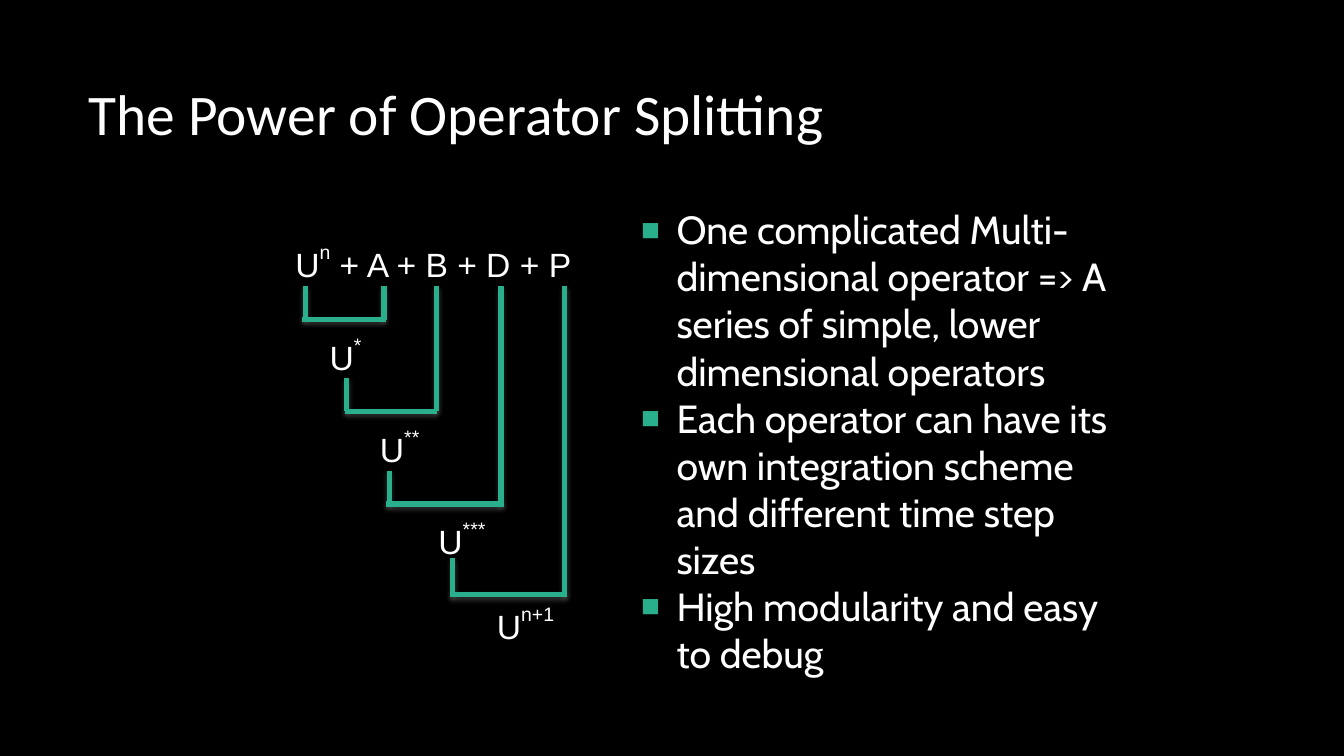
from lxml import etree
from pptx import Presentation
from pptx.dml.color import RGBColor
from pptx.enum import shapes, text
from pptx.oxml import parse_xml
from pptx.oxml.ns import nsdecls
from pptx.util import Inches, Pt

WHITE, GREEN, BLACK = "FFFFFF", "29AF8C", "000000"
FORMULA_TOP = 2.84

# left, top, base, superscript, remainder
STATES = [
    (2.83, 2.33, "U", "n", " + A + B + D + P"),
    (3.17, 3.25, "U", "*", ""),
    (3.67, 4.17, "U", "**", ""),
    (4.25, 5.08, "U", "***", ""),
    (4.83, 5.92, "U", "n+1", ""),
]
# x of the state, x of the operator, top at the state, bottom, bar left, bar right
BRACKETS = [
    (3.03, 3.81, 2.84, 3.17, 3.0, 3.83),
    (3.44, 4.33, 3.75, 4.08, 3.42, 4.33),
    (3.86, 4.97, 4.67, 5.0, 3.83, 5.0),
    (4.49, 5.6, 5.54, 5.9, 4.46, 5.62),
]
BENEFITS = [
    "One complicated Multi-dimensional operator => A series of simple, lower dimensional operators",
    "Each operator can have its own integration scheme and different time step sizes",
    "High modularity and easy to debug",
]


def color(value):
    return RGBColor.from_string(value)


def style_run(run, size, font):
    run.font.size = Pt(size)
    run.font.name = font
    run.font.color.rgb = color(WHITE)


def place(shape, left, top, width, height):
    shape.left, shape.top = Inches(left), Inches(top)
    shape.width, shape.height = Inches(width), Inches(height)


def fill_title(title):
    place(title, 0.78, 0.47, 9, 1.37)
    frame = title.text_frame
    frame.text = "The Power of Operator Splitting"
    frame.vertical_anchor = text.MSO_ANCHOR.MIDDLE
    frame.auto_size = text.MSO_AUTO_SIZE.NONE
    heading = frame.paragraphs[0]
    heading.alignment = text.PP_ALIGN.LEFT
    heading.line_spacing = 0.9
    style_run(heading.runs[0], 41, "Calibri")


def add_square_bullet(paragraph):
    props = paragraph._p.get_or_add_pPr()
    props.set("marL", str(Inches(0.48)))
    props.set("indent", str(Inches(-0.35)))
    for xml in (
        f'<a:buClr {nsdecls("a")}><a:srgbClr val="{GREEN}"/></a:buClr>',
        f'<a:buSzPct {nsdecls("a")} val="80000"/>',
        f'<a:buFont {nsdecls("a")} typeface="Arial"/>',
        f'<a:buChar {nsdecls("a")} char="■"/>',
    ):
        props.append(parse_xml(xml))


def fill_benefits(body):
    place(body, 6.17, 1.94, 5, 5.06)
    frame = body.text_frame
    frame.text = "\n".join(BENEFITS)
    frame.auto_size = text.MSO_AUTO_SIZE.NONE
    frame.margin_left, frame.margin_top = Inches(0.06), Inches(0.1)
    frame.margin_right, frame.margin_bottom = Inches(0.1), Inches(0.05)
    for benefit in frame.paragraphs:
        benefit.space_before = Pt(0)
        add_square_bullet(benefit)
        style_run(benefit.runs[0], 28, "Cabin")


def add_state(slide, left, top, base, superscript, remainder):
    box = slide.shapes.add_textbox(Inches(left), Inches(top), Inches(3.08), Inches(0.51))
    box.text_frame.word_wrap = True
    formula = box.text_frame.paragraphs[0]
    for part in filter(None, (base, superscript, remainder)):
        run = formula.add_run()
        run.text = part
        style_run(run, 24, "Arial")
        if part == superscript:
            run.font._element.set("baseline", "54000")


def add_shadow(line):
    effects = parse_xml(
        f'<a:effectLst {nsdecls("a")}>'
        f'<a:outerShdw blurRad="{Pt(3.5)}" dist="{Pt(2)}" dir="5400000" rotWithShape="0">'
        '<a:srgbClr val="808080"><a:alpha val="38000"/></a:srgbClr>'
        "</a:outerShdw></a:effectLst>"
    )
    line._element.spPr.append(effects)


def add_bracket(slide, state_x, operator_x, state_top, bottom, bar_left, bar_right):
    """Join a state and an operator from below."""
    bracket = slide.shapes.add_group_shape()
    for x1, y1, x2, y2 in (
        (state_x, state_top, state_x, bottom),
        (operator_x, FORMULA_TOP, operator_x, bottom),
        (bar_left, bottom, bar_right, bottom),
    ):
        line = bracket.shapes.add_connector(
            shapes.MSO_CONNECTOR.STRAIGHT, Inches(x1), Inches(y1), Inches(x2), Inches(y2))
        line.line.color.rgb = color(GREEN)
        line.line.width = Pt(3.78)
        add_shadow(line)


def main():
    deck = Presentation()
    deck.slide_width, deck.slide_height = Inches(13.33), Inches(7.5)
    slide = deck.slides.add_slide(deck.slide_layouts[1])
    slide.background.fill.solid()
    slide.background.fill.fore_color.rgb = color(BLACK)
    fill_title(slide.shapes.title)
    fill_benefits(slide.placeholders[1])
    for state in STATES:
        add_state(slide, *state)
    for bracket in BRACKETS:
        add_bracket(slide, *bracket)
    deck.save("out.pptx")


if __name__ == "__main__":
    main()
